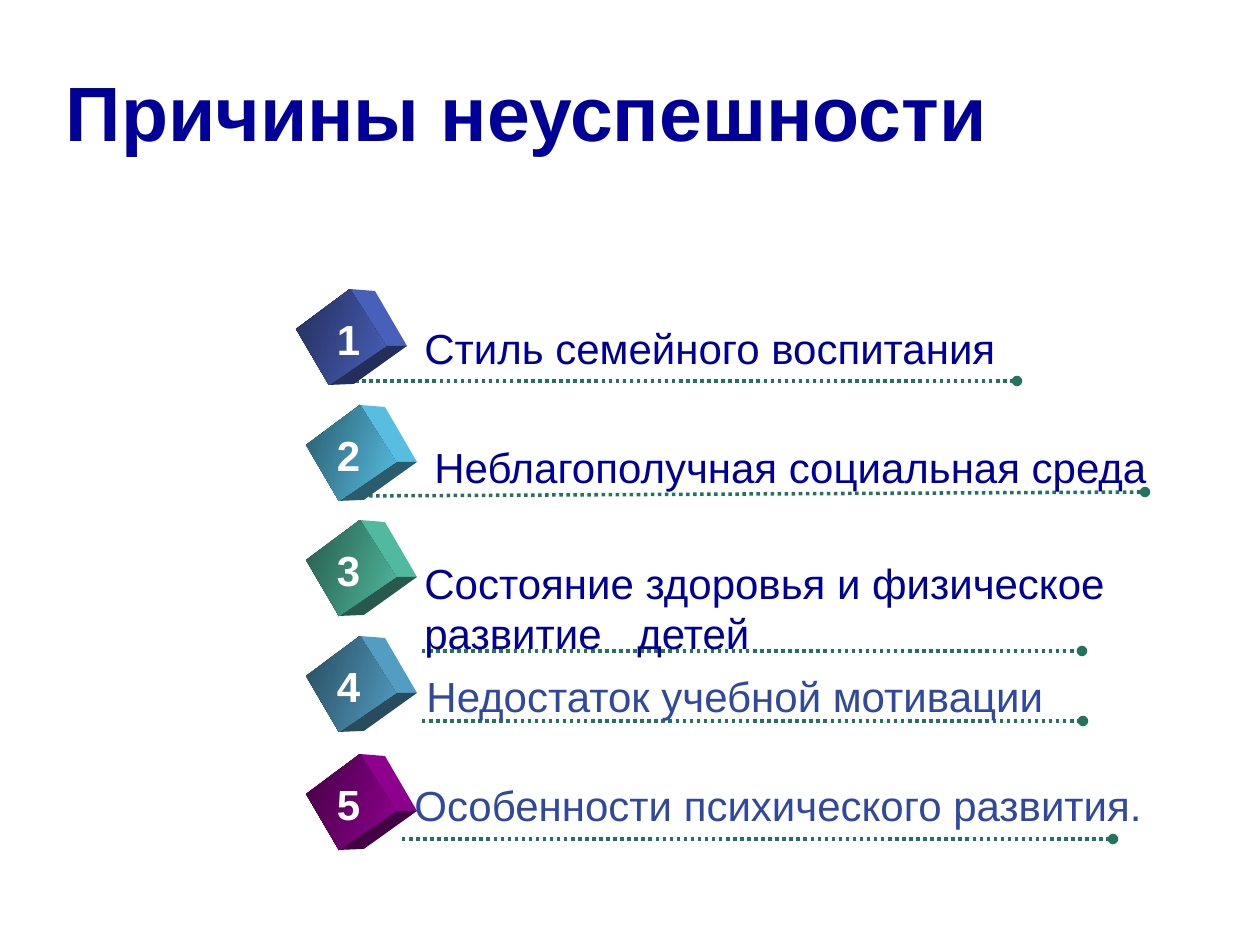
import pptx
import pptx.dml.color
import pptx.enum.shapes
import pptx.enum.dml
import pptx.enum.text
import pptx.util
from lxml import etree
from pptx.oxml.ns import qn

EMU_PER_PX = 914400 / 126
FONT = "Arial"
NAVY, BLUE, GREEN, WHITE = "000099", "31489F", "23735D", "FFFFFF"
NUMBER_LEFT = 324

# Cube faces, in px from the cube's top left corner
FRONT = [(0, 40), (54, 0), (90, 57), (33, 96)]
SIDE = [(54, 0), (79, 2), (111, 57), (90, 57)]
BOTTOM = [(33, 96), (90, 57), (111, 57), (58, 95)]

# Cube corner and colour, text lines with colour and box, rule start and end
REASONS = [
    ((296, 289), "4E67C8", ["Стиль семейного воспитания"], NAVY,
     (412, 316, 696, 63), (355, 381), (1017, 381)),
    ((306, 405), "5ECCF3", ["Неблагополучная социальная среда"], NAVY,
     (422, 435, 830, 63), (355, 496), (1145, 492)),
    ((306, 520), "56C7AA", ["Состояние здоровья и физическое", "развитие\tдетей"], NAVY,
     (412, 551, 735, 114), (422, 651), (1082, 651)),
    ((306, 636), "59A8D1", ["Недостаток учебной мотивации"], BLUE,
     (414, 664, 773, 63), (422, 721), (1083, 721)),
    ((306, 754), "990099", ["Особенности психического развития."], BLUE,
     (402, 773, 754, 63), (402, 839), (1113, 839)),
]


def px(length):
    return pptx.util.Emu(round(length * EMU_PER_PX))


def color(hex_string):
    return pptx.dml.color.RGBColor.from_string(hex_string)


def shade(hex_string, factor):
    return "".join(f"{round(int(hex_string[i:i + 2], 16) * factor):02X}" for i in (0, 2, 4))


def style(paragraph, size, hex_string, bold=False):
    font = paragraph.font
    font.name, font.size, font.bold = FONT, pptx.util.Pt(size), bold
    font.color.rgb = color(hex_string)


def add_title(slide, box, text):
    title = slide.shapes.title
    title.left, title.top, title.width, title.height = map(px, box)
    title.text_frame.text = text
    title.text_frame.vertical_anchor = pptx.enum.text.MSO_ANCHOR.MIDDLE
    heading = title.text_frame.paragraphs[0]
    heading.alignment = pptx.enum.text.PP_ALIGN.CENTER
    style(heading, 44, NAVY, bold=True)


def add_text(slide, box, lines, hex_string, bold=False, centred=False):
    frame = slide.shapes.add_textbox(*map(px, box)).text_frame
    frame.word_wrap = not centred
    for i, line in enumerate(lines):
        paragraph = frame.paragraphs[0] if i == 0 else frame.add_paragraph()
        paragraph.text = line
        if "\t" in line:
            stops = etree.SubElement(paragraph._p.get_or_add_pPr(), qn("a:tabLst"))
            etree.SubElement(stops, qn("a:tab"), pos=str(px(213)), algn="l")
        if centred:
            paragraph.alignment = pptx.enum.text.PP_ALIGN.CENTER
        style(paragraph, 24, hex_string, bold)


def add_face(slide, corner, points):
    left, top = corner
    outline = [(left + x, top + y) for x, y in points]
    builder = slide.shapes.build_freeform(*outline[0], scale=EMU_PER_PX)
    builder.add_line_segments(outline[1:], close=True)
    face = builder.convert_to_shape()
    face.shadow.inherit = False
    face.line.fill.background()
    return face


def add_cube(slide, corner, hex_string, number):
    for points, factor in ((SIDE, 0.93), (BOTTOM, 0.45)):
        face = add_face(slide, corner, points)
        face.fill.solid()
        face.fill.fore_color.rgb = color(shade(hex_string, factor))
    # The front face brightens towards its lower right
    front = add_face(slide, corner, FRONT)
    front.fill.gradient()
    front.fill.gradient_angle = 340
    for stop, factor in zip(front.fill.gradient_stops, (0.45, 0.93)):
        stop.color.rgb = color(shade(hex_string, factor))
    add_text(slide, (NUMBER_LEFT, corner[1] + 18, 49, 63), [str(number)], WHITE,
             bold=True, centred=True)


def add_rule(slide, start, end):
    rule = slide.shapes.add_connector(
        pptx.enum.shapes.MSO_CONNECTOR.STRAIGHT, *map(px, start + end))
    rule.line.color.rgb = color(GREEN)
    rule.line.width = pptx.util.Pt(2)
    rule.line.dash_style = pptx.enum.dml.MSO_LINE.ROUND_DOT
    etree.SubElement(rule.line._get_or_add_ln(), qn("a:tailEnd"), type="oval")
    etree.SubElement(rule._element.spPr, qn("a:effectLst"))


def add_reason(slide, number, reason):
    corner, cube_color, lines, text_color, box, start, end = reason
    add_rule(slide, start, end)
    add_cube(slide, corner, cube_color, number)
    add_text(slide, box, lines, text_color)


def main():
    deck = pptx.Presentation()
    deck.slide_width, deck.slide_height = px(1260), px(945)
    slide = deck.slides.add_slide(deck.slide_layouts[5])
    add_title(slide, (0, 31, 1054, 159), "Причины неуспешности")
    for number, reason in enumerate(REASONS, start=1):
        add_reason(slide, number, reason)
    deck.save("out.pptx")


if __name__ == "__main__":
    main()
